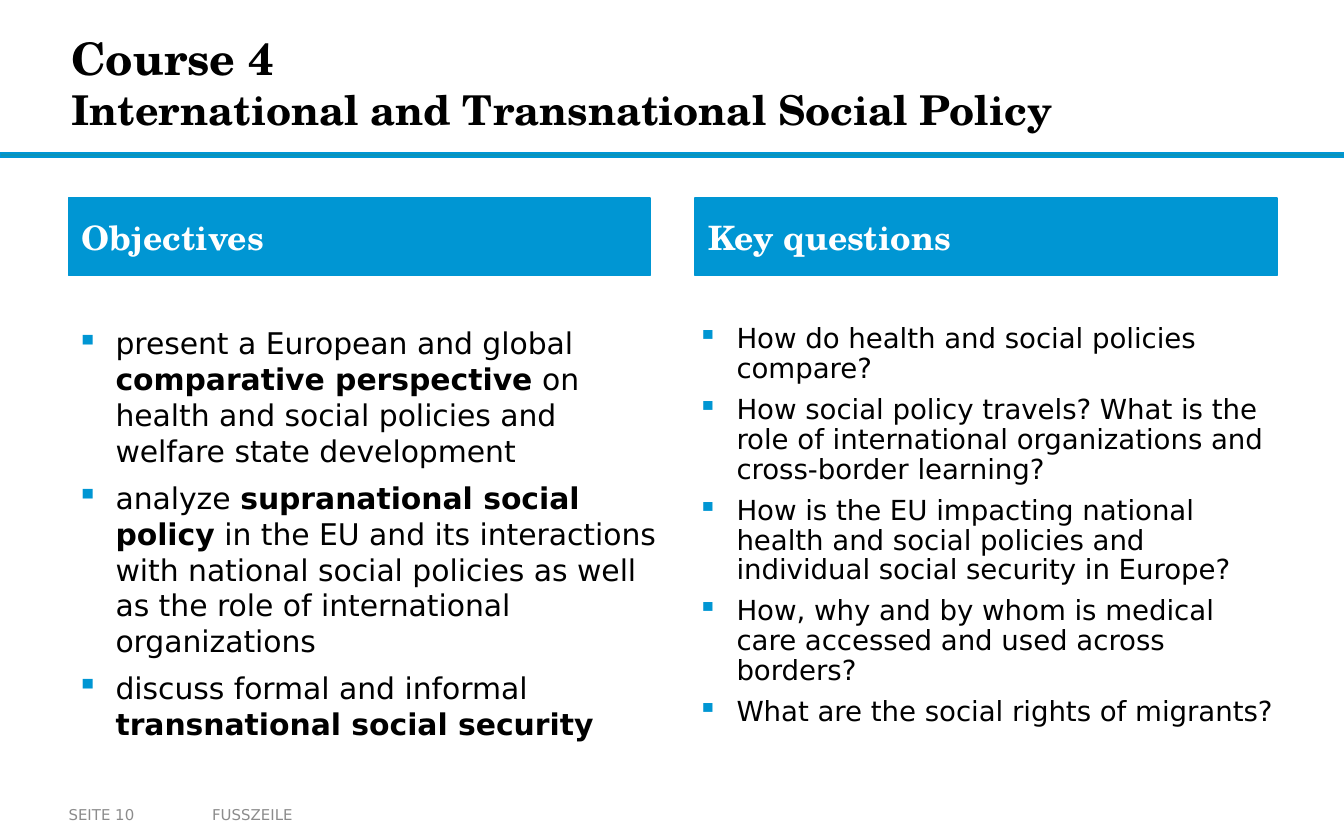
from dataclasses import dataclass

from lxml import etree
from pptx import Presentation
from pptx import util as u
from pptx.dml.color import RGBColor
from pptx.enum import shapes, text
from pptx.oxml import ns


@dataclass(frozen=True)
class Theme:
    blue: str = "0096D3"
    teal: str = "0C94B7"
    black: str = "000000"
    white: str = "FFFFFF"
    grey: str = "8C8C8C"
    serif: str = "TeX Gyre Schola"
    sans: str = "DejaVu Sans"
    title: float = 24
    subtitle: float = 22
    heading: float = 18
    objectives: float = 16
    questions: float = 14.8
    footer: float = 8


theme = Theme()


def prepare(box, anchor, side=0, edge=0.05):
    """Set the wrapping, anchor and margins of a box; return its text frame."""
    frame = box.text_frame
    formats = {
        "word_wrap": True,
        "vertical_anchor": anchor,
        "margin_left": u.Inches(side),
        "margin_right": u.Inches(side),
        "margin_top": u.Inches(edge),
        "margin_bottom": u.Inches(edge),
    }
    for name, value in formats.items():
        setattr(frame, name, value)
    return frame


def add_span(para, words, size, family, color, bold=False):
    """Add one formatted run to a paragraph."""
    span = para.add_run()
    span.text = words
    formats = {"size": u.Pt(size), "name": family, "bold": bold}
    for name, value in formats.items():
        setattr(span.font, name, value)
    span.font.color.rgb = RGBColor.from_string(color)


deck = Presentation()
deck.slide_width, deck.slide_height = u.Inches(10), u.Inches(6.25)
page = deck.slides.add_slide(deck.slide_layouts[6])
middle, top = text.MSO_ANCHOR.MIDDLE, text.MSO_ANCHOR.TOP

# Title
box = page.shapes.add_textbox(u.Inches(0.53), u.Inches(0.12), u.Inches(7.56), u.Inches(0.99))
para = prepare(box, middle, edge=0).paragraphs[0]
add_span(para, "Course 4", theme.title, theme.serif, theme.black, True)
para.add_line_break()
add_span(para, "International and Transnational Social Policy",
         theme.subtitle, theme.serif, theme.black, True)

# Rule under the title and the two column headings
bars = [
    (0, 1.14, 10, 0.03, theme.teal, ""),
    (0.51, 1.47, 4.33, 0.58, theme.blue, "Objectives"),
    (5.17, 1.47, 4.33, 0.58, theme.blue, "Key questions"),
]
for left, y, width, height, fill, heading in bars:
    bar = page.shapes.add_shape(shapes.MSO_SHAPE.RECTANGLE, u.Inches(left), u.Inches(y),
                                u.Inches(width), u.Inches(height))
    bar.shadow.inherit = False
    bar.fill.solid()
    bar.fill.fore_color.rgb = RGBColor.from_string(fill)
    bar.line.color.rgb = RGBColor.from_string(theme.blue)
    bar.line.width = u.Pt(1)
    if heading:
        para = prepare(bar, middle).paragraphs[0]
        para.alignment = text.PP_ALIGN.LEFT
        para.space_after = u.Pt(6)
        para._p.get_or_add_pPr().set("marL", str(u.Inches(0.1)))
        add_span(para, heading, theme.heading, theme.serif, theme.white, True)

# Bulleted columns: each item is a list of pieces, every second piece is bold
objectives = [
    ["present a European and global ", "comparative perspective",
     " on health and social policies and welfare state development"],
    ["analyze ", "supranational social policy",
     " in the EU and its interactions with national social policies as well as"
     " the role of international organizations"],
    ["discuss formal and informal ", "transnational social security"],
]
questions = [
    ["How do health and social policies compare?"],
    ["How social policy travels? What is the role of international organizations"
     " and cross-border learning?"],
    ["How is the EU impacting national health and social policies and individual"
     " social security in Europe?"],
    ["How, why and by whom is medical care accessed and used across borders?"],
    ["What are the social rights of migrants?"],
]
columns = [
    (0.57, objectives, theme.objectives, 1.0),
    (5.19, questions, theme.questions, 0.9),
]
for left, items, size, spacing in columns:
    box = page.shapes.add_textbox(u.Inches(left), u.Inches(2.37), u.Inches(4.33), u.Inches(3.57))
    frame = prepare(box, top)
    for index, pieces in enumerate(items):
        para = frame.add_paragraph() if index else frame.paragraphs[0]
        props = para._p.get_or_add_pPr()
        props.set("marL", str(u.Inches(0.29)))
        props.set("indent", str(u.Inches(-0.29)))
        bullet_color = etree.SubElement(props, ns.qn("a:buClr"))
        etree.SubElement(bullet_color, ns.qn("a:srgbClr"), val=theme.blue)
        etree.SubElement(props, ns.qn("a:buChar"), char="▪")
        para.line_spacing = spacing
        para.space_after = u.Pt(6)
        for place, piece in enumerate(pieces):
            add_span(para, piece, size, theme.sans, theme.black, place % 2 == 1)

# Footer
for left, width, side, words in [(0.51, 0.98, 0, "SEITE 10"), (1.48, 3.52, 0.1, "FUSSZEILE")]:
    box = page.shapes.add_textbox(u.Inches(left), u.Inches(5.92), u.Inches(width), u.Inches(0.28))
    para = prepare(box, middle, side).paragraphs[0]
    add_span(para, words, theme.footer, theme.sans, theme.grey)

deck.save("out.pptx")
